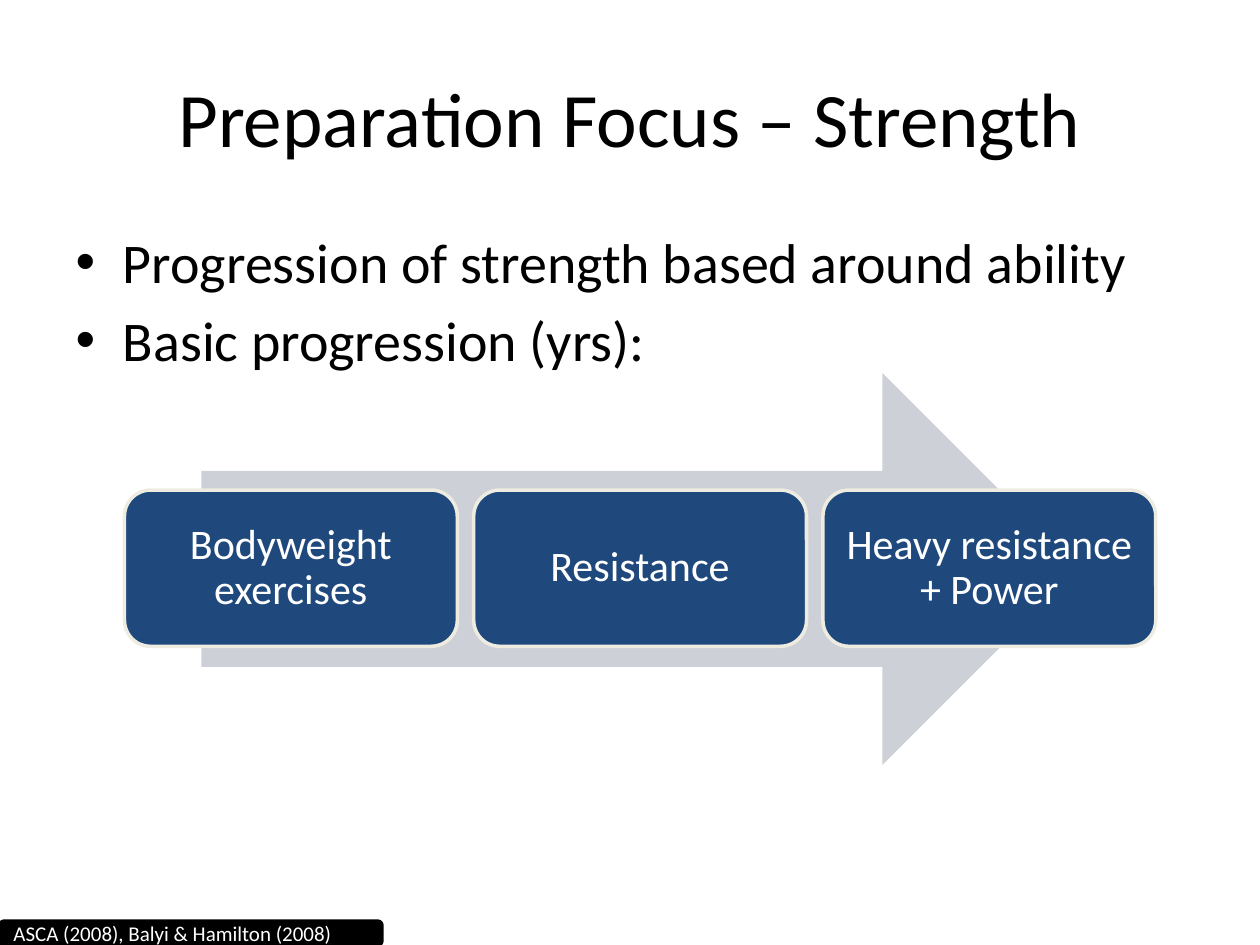
from pptx import Presentation
from pptx.dml.color import RGBColor
from pptx.enum.shapes import MSO_SHAPE as Shape
from pptx.enum.text import MSO_ANCHOR as Anchor, PP_ALIGN as Align
from pptx.util import Cm, Pt

BLACK = RGBColor(0x00, 0x00, 0x00)
WHITE = RGBColor(0xFF, 0xFF, 0xFF)
NAVY = RGBColor(0x1F, 0x49, 0x7D)
CREAM = RGBColor(0xEE, 0xEC, 0xE1)
GREY = RGBColor(0xCD, 0xD0, 0xD7)


class Deck:
    font = "Calibri"

    def __init__(self):
        self.prs = Presentation()
        self.prs.slide_width, self.prs.slide_height = Cm(25.4), Cm(19.05)
        self.slide = self.prs.slides.add_slide(self.prs.slide_layouts[1])

    def style(self, para, size, color):
        for run in para.runs:
            run.font.name = self.font
            run.font.size = Pt(size)
            run.font.color.rgb = color

    def fill_in(self, holder, box, lines, size):
        """Move a placeholder and write one paragraph per line."""
        holder.left, holder.top, holder.width, holder.height = map(Cm, box)
        frame = holder.text_frame
        frame.text = "\n".join(lines)
        for para in frame.paragraphs:
            self.style(para, size, BLACK)
        frame.paragraphs[0].space_before = Pt(0)

    def shape(self, home, kind, box, fill, line=None):
        item = home.shapes.add_shape(kind, *map(Cm, box))
        item.shadow.inherit = False
        item.fill.solid()
        item.fill.fore_color.rgb = fill
        if line is None:
            item.line.fill.background()
        else:
            item.line.color.rgb = line
            item.line.width = Pt(2)
        return item

    def label(self, item, text, size, align):
        frame = item.text_frame
        frame.word_wrap = True
        frame.vertical_anchor = Anchor.MIDDLE
        frame.text = text
        para = frame.paragraphs[0]
        para.alignment = align
        self.style(para, size, WHITE)
        return frame

    def step(self, home, box, text):
        item = self.shape(home, Shape.ROUNDED_RECTANGLE, box, NAVY, CREAM)
        frame = self.label(item, text, 24, Align.CENTER)
        frame.margin_left = frame.margin_right = Cm(0.1)
        frame.paragraphs[0].line_spacing = 0.9


def main():
    deck = Deck()
    slide = deck.slide

    # Title and list
    deck.fill_in(slide.shapes.title, (1.27, 0.76, 22.86, 3.18),
                 ["Preparation Focus – Strength"], 44)
    deck.fill_in(slide.placeholders[1], (1.27, 4.45, 22.86, 12.57),
                 ["Progression of strength based around ability",
                  "Basic progression (yrs):"], 32)

    # Arrow with the three steps on it
    flow = slide.shapes.add_group_shape()
    deck.shape(flow, Shape.RIGHT_ARROW, (4.06, 7.52, 17.68, 7.9), GREY)
    steps = ["Bodyweight exercises", "Resistance", "Heavy resistance + Power"]
    width, gap = 6.71, 0.33
    for i, text in enumerate(steps):
        deck.step(flow, (2.51 + i * (width + gap), 9.88, width, 3.15), text)

    # Source bar
    bar = deck.shape(slide, Shape.ROUNDED_RECTANGLE, (0, 18.57, 7.7, 0.48),
                     BLACK, BLACK)
    deck.label(bar, "ASCA (2008), Balyi & Hamilton (2008)", 12, Align.LEFT)

    deck.prs.save("out.pptx")


if __name__ == "__main__":
    main()
